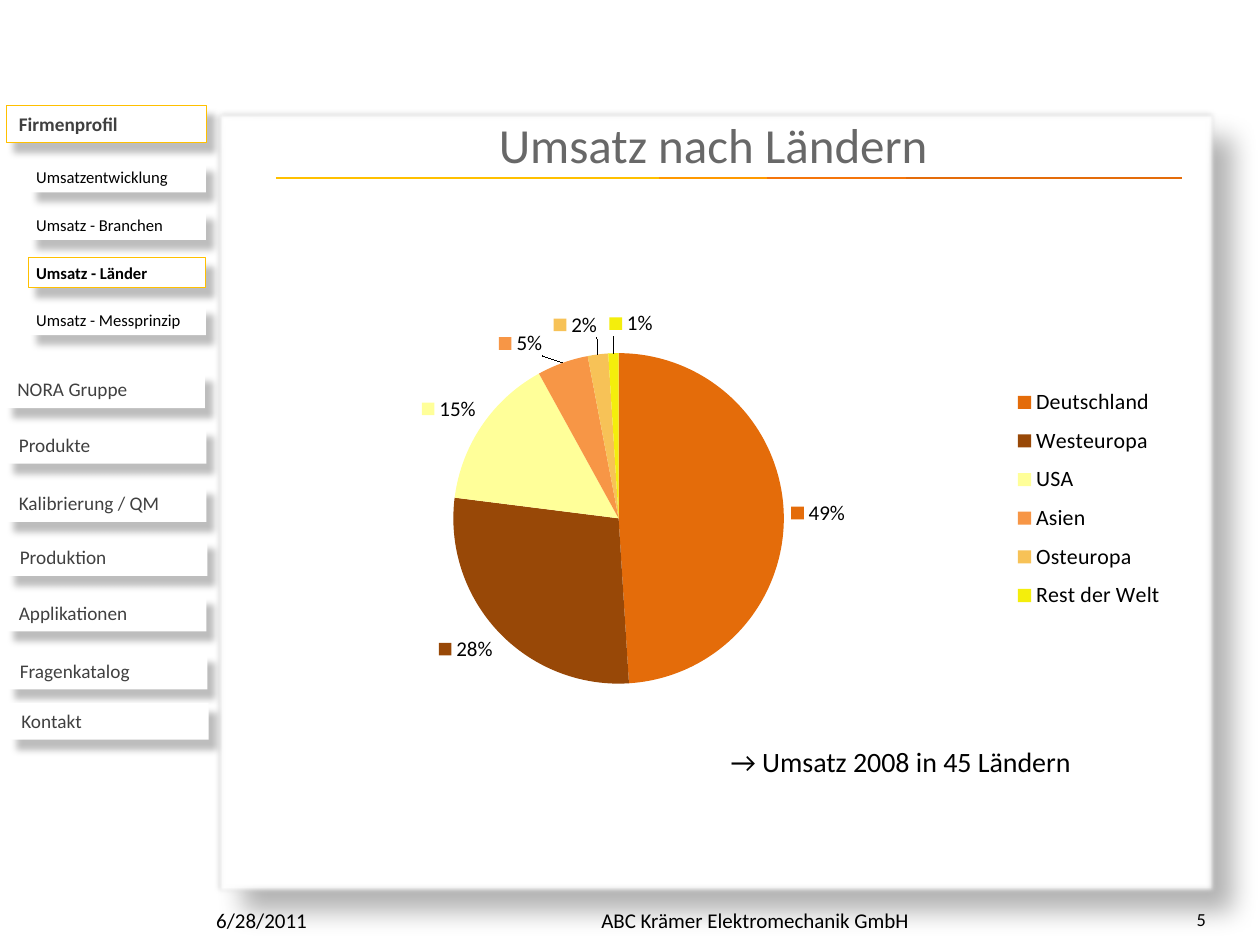
from lxml import etree
from pptx import Presentation
from pptx.chart.data import CategoryChartData
from pptx.dml.color import RGBColor as RGB
from pptx.enum.chart import XL_CHART_TYPE as Kind, XL_LABEL_POSITION as Spot
from pptx.enum.chart import XL_LEGEND_POSITION as Side
from pptx.enum.shapes import MSO_CONNECTOR as Link, MSO_SHAPE as Form
from pptx.enum.text import MSO_ANCHOR as Anchor, PP_ALIGN as Align
from pptx.oxml import parse_xml
from pptx.oxml.ns import nsdecls, qn
from pptx.util import Cm, Pt

FONT = "Calibri"
HUES = {
    "white": "FFFFFF", "black": "000000", "title": "686868", "menu": "404040",
    "frame": "DCDCDC", "gold": "FFC000",
}
RULE = [("FFC000", 13.28), ("FF9900", 15.47), ("F5750B", 18.26), ("E46C0A", 23.83)]
SALES = [
    ("Deutschland", 0.49, "E46C0A"), ("Westeuropa", 0.28, "984807"),
    ("USA", 0.15, "FFFF99"), ("Asien", 0.05, "F79646"),
    ("Osteuropa", 0.02, "F7C257"), ("Rest der Welt", 0.01, "F4EE0C"),
]
NUDGES = {3: (-0.02, 0), 4: (0, -0.02), 5: (0.02, -0.02)}
SUBS = ["Umsatzentwicklung", "Umsatz - Branchen", "Umsatz - Länder",
        "Umsatz - Messprinzip"]
ITEMS = [
    ("Firmenprofil", 0.03, 0), ("NORA Gruppe", 0, 5.36), ("Produkte", 0.03, 6.48),
    ("Kalibrierung / QM", 0.03, 7.65), ("Produktion", 0.05, 8.74),
    ("Applikationen", 0.03, 9.86), ("Fragenkatalog", 0.05, 11.03),
    ("Kontakt", 0.08, 12.04),
]


def rgb(name):
    return RGB.from_string(HUES.get(name, name))


def write(frame, text, size, hue="black", bold=False, align=Align.LEFT):
    para = frame.paragraphs[0]
    para.alignment = align
    run = para.add_run()
    run.text = text
    font = run.font
    font.name, font.size, font.bold = FONT, Pt(size), bold
    font.color.rgb = rgb(hue)


def add_text(slide, box, text, size, anchor=Anchor.TOP, **look):
    frame = slide.shapes.add_textbox(*map(Cm, box)).text_frame
    frame.word_wrap = True
    frame.vertical_anchor = anchor
    write(frame, text, size, **look)


def cast(shape, alpha, blur, dist, angle):
    """Give the shape an outer shadow; blur and distance are in points."""
    shape.shadow.inherit = False
    effects = shape.element.spPr.find(qn("a:effectLst"))
    effects.append(parse_xml(
        f'<a:outerShdw {nsdecls("a")} blurRad="{Pt(blur)}" dist="{Pt(dist)}" '
        f'dir="{angle * 60000}" algn="tl" rotWithShape="0"><a:srgbClr val="000000">'
        f'<a:alpha val="{alpha * 1000}"/></a:srgbClr></a:outerShdw>'))
    return effects


def add_card(slide, box, shade, edge=None, width=0.75, soft=0):
    card = slide.shapes.add_shape(Form.RECTANGLE, *map(Cm, box))
    card.fill.solid()
    card.fill.fore_color.rgb = rgb("white")
    if edge:
        card.line.color.rgb = rgb(edge)
        card.line.width = Pt(width)
    else:
        card.line.fill.background()
    effects = cast(card, *shade)
    if soft:
        etree.SubElement(effects, qn("a:softEdge"), rad=str(Pt(soft)))
    return card


def add_panel(slide, box):
    """Place the large card with the title and the rule below it."""
    left, top = box[:2]
    card = add_card(slide, box, (30, 15, 18, 45), "frame", 4.25, soft=2.5)
    title = slide.shapes.title
    title.element.addprevious(card.element)
    title.left, title.top = Cm(left + 1.57), Cm(top - 0.23)
    title.width, title.height = Cm(16.87), Cm(1.75)
    title.text_frame.vertical_anchor = Anchor.MIDDLE
    write(title.text_frame, "Umsatz nach Ländern", 28, "title", align=Align.CENTER)
    start, level = left + 1.19, top + 1.33
    for hue, end in RULE:
        line = slide.shapes.add_connector(
            Link.STRAIGHT, Cm(start), Cm(level), Cm(end), Cm(level))
        line.line.color.rgb = rgb(hue)
        line.line.width = Pt(0.75)
        etree.SubElement(line.element.spPr, qn("a:effectLst"))
        start = end


def add_menu(slide, left, top):
    shade = (25, 4, 7, 52)
    for text, shift, drop in ITEMS:
        head = drop == 0
        card = add_card(slide, (left + shift, top + drop, 4.03, 0.74), shade,
                        "gold" if head else None)
        card.text_frame.vertical_anchor = Anchor.TOP
        write(card.text_frame, text, 11, "menu", head)
    for row, text in enumerate(SUBS):
        here = text == "Umsatz - Länder"
        level = top + 1.14 + row * 0.96
        add_card(slide, (left + 0.48, level, 3.57, 0.61), shade,
                 "gold" if here else None)
        add_text(slide, (left + 0.38, level - 0.02, 4.1, 0.66), text, 9.5, bold=here)


def set_place(node, index, head="", **spots):
    """Fix the place of a chart part, in shares of the chart."""
    for old in node.findall(qn("c:layout")):
        node.remove(old)
    sizes = "".join(f'<c:{key} val="{val}"/>' for key, val in spots.items())
    node.insert(index, parse_xml(
        f'<c:layout {nsdecls("c")}><c:manualLayout>{head}{sizes}'
        f'</c:manualLayout></c:layout>'))


def set_labels(chart, series):
    labels = series.data_labels
    labels.show_value = labels.show_legend_key = True
    labels.number_format, labels.number_format_is_linked = "0%", False
    labels.position = Spot.OUTSIDE_END
    labels.font.name, labels.font.size = FONT, Pt(12)
    for index in NUDGES:
        label = series.points[index].data_label
        label.font.name, label.font.size = FONT, Pt(12)
        label.position = Spot.OUTSIDE_END
    for node in chart.element.iter(qn("c:dLbl")):
        x, y = NUDGES[int(node.find(qn("c:idx")).get("val"))]
        node.find(qn("c:showLegendKey")).set("val", "1")
        set_place(node, 1, x=x, y=y)


def add_pie(slide, box):
    data = CategoryChartData(number_format="0%")
    data.categories = [name for name, _, _ in SALES]
    data.add_series("Series 1", [share for _, share, _ in SALES])
    chart = slide.shapes.add_chart(Kind.PIE, *map(Cm, box), data).chart
    chart.has_title = False
    chart.font.name, chart.font.size = FONT, Pt(10)
    chart.font.color.rgb = rgb("black")
    chart.has_legend = True
    legend = chart.legend
    legend.position, legend.include_in_layout = Side.RIGHT, False
    legend.font.name, legend.font.size = FONT, Pt(12.5)
    plot = chart.plots[0]
    plot.vary_by_categories = True
    series = plot.series[0]
    for index, (_, _, hue) in enumerate(SALES):
        fill = series.points[index].format.fill
        fill.solid()
        fill.fore_color.rgb = rgb(hue)
    set_labels(chart, series)
    edge = '<c:xMode val="edge"/><c:yMode val="edge"/>'
    area = chart.element.find(".//" + qn("c:plotArea"))
    set_place(area, 0, '<c:layoutTarget val="inner"/>' + edge,
              x=0.08, y=0.2, w=0.54, h=0.68)
    set_place(chart.element.find(".//" + qn("c:legend")), 1, edge,
              x=0.78, y=0.25, w=0.19, h=0.5)


def add_footer(slide, top):
    for left, width, text, size, align in [
        (4.11, 5.92, "6/28/2011", 12, Align.LEFT),
        (11.2, 8.05, "ABC Krämer Elektromechanik GmbH", 12, Align.CENTER),
        (18.64, 5.92, "5", 10.5, Align.RIGHT),
    ]:
        add_text(slide, (left, top, width, 1.02), text, size, Anchor.MIDDLE,
                 align=align)


def main():
    deck = Presentation()
    deck.slide_width, deck.slide_height = Cm(25.4), Cm(19.05)
    slide = deck.slides.add_slide(deck.slide_layouts[5])
    add_panel(slide, (4.37, 2.26, 20.12, 15.72))
    add_footer(slide, 18.03)
    add_text(slide, (14.48, 14.88, 7.75, 0.94), "→ Umsatz 2008 in 45 Ländern", 16)
    add_menu(slide, 0.1, 2.13)
    add_pie(slide, (6.15, 5.16, 18.06, 9.8))
    deck.save("out.pptx")


if __name__ == "__main__":
    main()
